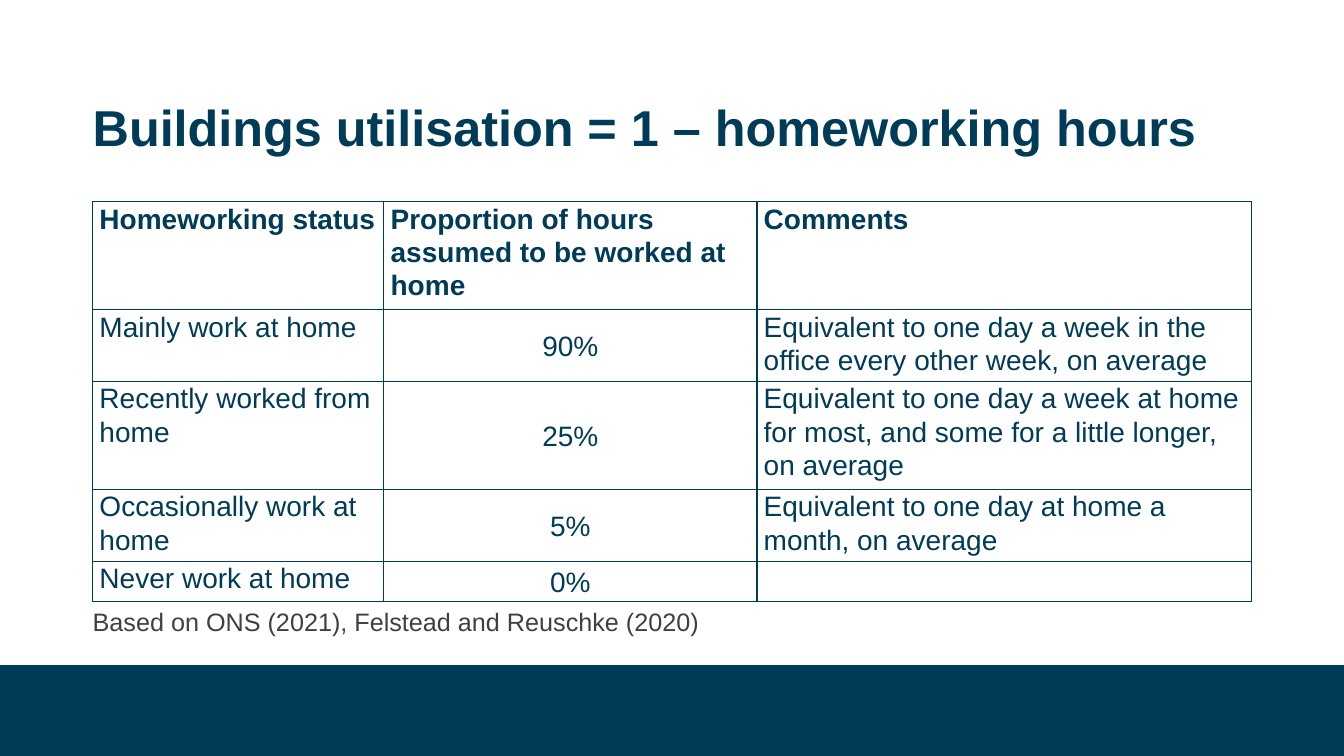
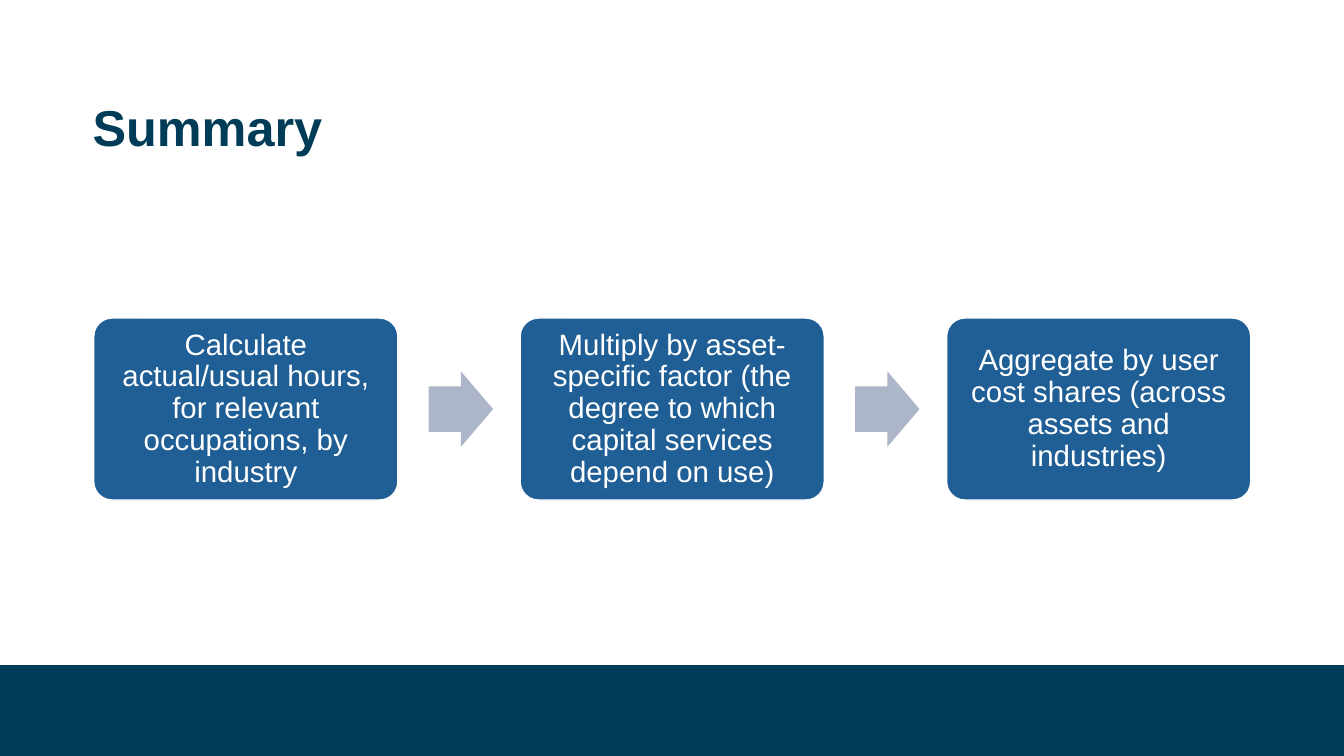
from lxml import etree
from pptx import Presentation
from pptx.dml.color import RGBColor
from pptx.enum import shapes, text
from pptx.oxml.ns import qn
from pptx.util import Pt

HUES = {"navy": "003C57", "ink": "003B57", "blue": "205F95",
        "mist": "ACB6C8", "grey": "414041", "white": "FFFFFF"}
WIDE, HIGH = 960, 540
LEFT, SPAN = 66.2, 828
TITLE = {"size": Pt(36), "bold": True}
CELL = {"size": Pt(20), "bold": False}
HEAD = {**CELL, "bold": True}
NOTE = {"size": Pt(18)}
STEP = {"size": Pt(21)}

COLS = [208, 266.5, 353.5]
ROWS = [
    (71, ["Homeworking status",
          "Proportion of hours assumed to be worked at home", "Comments"]),
    (47.5, ["Mainly work at home", "90%",
            "Equivalent to one day a week in the office every other week, on average"]),
    (71, ["Recently worked from home", "25%",
          "Equivalent to one day a week at home for most, and some for a little longer, on average"]),
    (47.5, ["Occasionally work at home", "5%",
            "Equivalent to one day at home a month, on average"]),
    (28.5, ["Never work at home", "0%", ""]),
]
STEPS = [
    "Calculate actual/usual hours, for relevant occupations, by industry",
    "Multiply by asset-specific factor (the degree to which capital services depend on use)",
    "Aggregate by user cost shares (across assets and industries)",
]


def hue(name):
    return RGBColor.from_string(HUES[name])


def pts(box):
    return [Pt(n) for n in box]


def put(item, values):
    for key, value in values.items():
        setattr(item, key, value)


def pads(left, top, right, bottom):
    sides = ("left", "top", "right", "bottom")
    return {"margin_" + side: Pt(n)
            for side, n in zip(sides, (left, top, right, bottom))}


def write(frame, words, font, color, **form):
    para = frame.paragraphs[0]
    put(para, form)
    run = para.add_run()
    run.text = words
    put(run.font, {"name": "Arial", **font})
    run.font.color.rgb = hue(color)


def label(slide, box, words, font, color, frame, **form):
    area = slide.shapes.add_textbox(*pts(box)).text_frame
    put(area, {**pads(0, 3.6, 7.2, 3.6), **frame})
    write(area, words, font, color, **form)


def block(slide, kind, box, fill, adjust=()):
    shape = slide.shapes.add_shape(kind, *pts(box))
    shape.shadow.inherit = False
    shape.fill.solid()
    shape.fill.fore_color.rgb = hue(fill)
    shape.line.fill.background()
    for i, value in enumerate(adjust):
        shape.adjustments[i] = value
    return shape


def page(deck, title):
    """Add a blank slide with the shared title and bottom band."""
    slide = deck.slides.add_slide(deck.slide_layouts[6])
    block(slide, shapes.MSO_SHAPE.RECTANGLE,
          (0, 475.2, WIDE, HIGH - 475.2), "navy")
    label(slide, (LEFT, 69.8, SPAN, 46.8), title, TITLE, "navy",
          {"word_wrap": True}, line_spacing=0.9)
    return slide


def edge(cell):
    """Draw a thin line on all four sides, ahead of the cell's fill."""
    props = cell._tc.get_or_add_tcPr()
    for i, side in enumerate(("lnL", "lnR", "lnT", "lnB")):
        line = etree.Element(qn("a:" + side), w=str(Pt(1)))
        fill = etree.SubElement(line, qn("a:solidFill"))
        etree.SubElement(fill, qn("a:srgbClr"), val=HUES["ink"])
        props.insert(i, line)


def grid(slide, left, top):
    high = sum(tall for tall, _ in ROWS)
    table = slide.shapes.add_table(
        len(ROWS), len(COLS), *pts((left, top, sum(COLS), high))).table
    put(table, {"first_row": False, "horz_banding": False})
    for col, wide in zip(table.columns, COLS):
        col.width = Pt(wide)
    for r, (tall, words) in enumerate(ROWS):
        table.rows[r].height = Pt(tall)
        for c, word in enumerate(words):
            cell = table.cell(r, c)
            put(cell, pads(4.9, 0, 4.9, 0))
            cell.fill.background()
            edge(cell)
            form = {"line_spacing": 1.07}
            if r and c == 1:
                cell.vertical_anchor = text.MSO_ANCHOR.MIDDLE
                form["alignment"] = text.PP_ALIGN.CENTER
            if word:
                write(cell.text_frame, word, CELL if r else HEAD, "ink", **form)


def flow(slide, left, top, wide, high, pitch):
    """Place the steps at an equal pitch, with an arrow in each gap."""
    for i, words in enumerate(STEPS):
        x = left + i * pitch
        if i:
            block(slide, shapes.MSO_SHAPE.RIGHT_ARROW,
                  (x - pitch + wide + 22, top + high / 2 - 27, 46, 54),
                  "mist", (0.6, 0.5))
        card = block(slide, shapes.MSO_SHAPE.ROUNDED_RECTANGLE,
                     (x, top, wide, high), "blue", (0.1,))
        card.line.color.rgb = hue("white")
        card.line.width = Pt(1)
        put(card.text_frame, {**pads(6.6, 6.6, 6.6, 6.6), "word_wrap": True,
                              "vertical_anchor": text.MSO_ANCHOR.MIDDLE})
        write(card.text_frame, words, STEP, "white", line_spacing=0.9,
              alignment=text.PP_ALIGN.CENTER)


def main():
    deck = Presentation()
    put(deck, {"slide_width": Pt(WIDE), "slide_height": Pt(HIGH)})
    slide = page(deck, "Buildings utilisation = 1 – homeworking hours")
    grid(slide, LEFT, 144)
    label(slide, (LEFT, 429.3, 444, 29),
          "Based on ONS (2021), Felstead and Reuschke (2020)", NOTE, "grey",
          {"word_wrap": False, "vertical_anchor": text.MSO_ANCHOR.BOTTOM})
    flow(page(deck, "Summary"), 67, 227.2, 217.2, 130, 304.6)
    deck.save("out.pptx")


if __name__ == "__main__":
    main()
